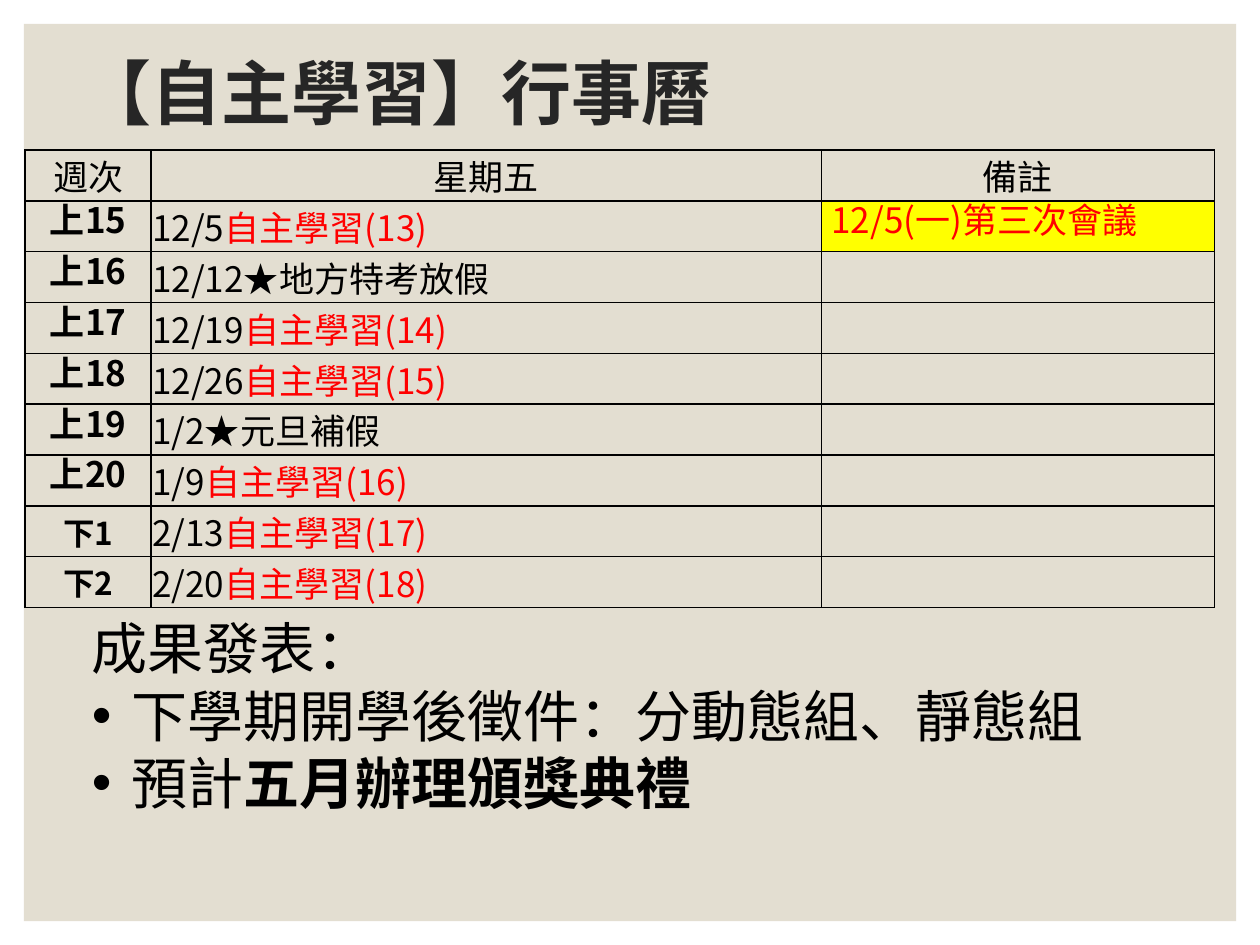
from lxml.etree import SubElement
from pptx import Presentation
from pptx.dml.color import RGBColor
from pptx.enum.shapes import MSO_SHAPE
from pptx.enum.text import MSO_ANCHOR as ANCHOR, MSO_AUTO_SIZE, PP_ALIGN as ALIGN
from pptx.oxml.ns import qn
from pptx.util import Inches, Pt

BLACK = RGBColor(0, 0, 0)
RED = RGBColor(0xFF, 0, 0)
YELLOW = RGBColor(0xFF, 0xFF, 0)
DARK = RGBColor(0x26, 0x26, 0x26)
SAND = RGBColor(0xE3, 0xDE, 0xD1)
FONT, TITLE_FONT = "Noto Sans CJK SC", "League Spartan"

TITLE = "【自主學習】行事曆"
HEADER = ["週次", "星期五", "備註"]
WEEKS = [
    ("上15", "12/5", "自主學習(13)", "12/5(一)第三次會議"),
    ("上16", "12/12★地方特考放假", "", ""),
    ("上17", "12/19", "自主學習(14)", ""),
    ("上18", "12/26", "自主學習(15)", ""),
    ("上19", "1/2★元旦補假", "", ""),
    ("上20", "1/9", "自主學習(16)", ""),
    ("下1", "2/13", "自主學習(17)", ""),
    ("下2", "2/20", "自主學習(18)", ""),
]
COLUMNS = [1, 5.32, 3.12]
RESULTS = [
    [("成果發表：", False)],
    [("下學期開學後徵件：分動態組、靜態組", False)],
    [("預計", False), ("五月辦理頒獎典禮", True)],
]


def box(left, top, width, height):
    return [Inches(v) for v in (left, top, width, height)]


def place(sp, area):
    sp.left, sp.top, sp.width, sp.height = area


def style(font, size, color=BLACK, bold=False, name=FONT):
    font.name, font.size, font.bold = name, Pt(size), bold
    font.color.rgb = color


def add_run(p, text, size, color=BLACK, bold=False, name=FONT):
    r = p.add_run()
    r.text = text
    style(r.font, size, color, bold, name)
    SubElement(r.font._element, qn("a:ea"), typeface=FONT)


def add_panel(slide, prs):
    margin = Inches(0.19)
    sp = slide.shapes.add_shape(MSO_SHAPE.RECTANGLE, margin, margin,
                                prs.slide_width - 2 * margin,
                                prs.slide_height - 2 * margin)
    sp.shadow.inherit = False
    sp.fill.solid()
    sp.fill.fore_color.rgb = SAND
    sp.line.fill.background()
    slide.shapes._spTree.insert(2, sp._element)


def add_title(slide, area):
    sp = slide.shapes.title
    place(sp, area)
    tf = sp.text_frame
    tf.vertical_anchor = ANCHOR.MIDDLE
    p = tf.paragraphs[0]
    p.alignment, p.line_spacing = ALIGN.LEFT, 0.9
    add_run(p, TITLE, 40, DARK, True, TITLE_FONT)


def format_cell(cell, fill=None):
    tc_pr = cell._tc.get_or_add_tcPr()
    for side in ("lnL", "lnR", "lnT", "lnB"):
        ln = SubElement(tc_pr, qn("a:" + side), w=str(Pt(1)))
        SubElement(SubElement(ln, qn("a:solidFill")), qn("a:srgbClr"), val=str(BLACK))
    if fill is None:
        cell.fill.background()
    else:
        cell.fill.solid()
        cell.fill.fore_color.rgb = fill
    cell.margin_left = cell.margin_right = Inches(0.01)
    cell.margin_top = cell.margin_bottom = 0
    cell.vertical_anchor = ANCHOR.MIDDLE
    p = cell.text_frame.paragraphs[0]
    style(p.font, 20)
    return p


def add_calendar(slide, area):
    left, top, width, height = area
    rows = len(WEEKS) + 1
    table = slide.shapes.add_table(rows, len(COLUMNS), left, top, width, height).table
    table.first_row = table.horz_banding = False
    for column, share in zip(table.columns, COLUMNS):
        column.width = int(width * share / sum(COLUMNS))
    for row in table.rows:
        row.height = height // rows
    for c, text in enumerate(HEADER):
        p = format_cell(table.cell(0, c))
        p.alignment = ALIGN.CENTER
        add_run(p, text, 20)
    for i, (week, date, lesson, note) in enumerate(WEEKS, 1):
        p = format_cell(table.cell(i, 0))
        p.alignment = ALIGN.CENTER
        first_term = week.startswith("上")
        if first_term:
            p.line_spacing = Pt(20)
        add_run(p, week, 20 if first_term else 18, bold=True)

        p = format_cell(table.cell(i, 1))
        table.cell(i, 1).vertical_anchor = ANCHOR.TOP
        add_run(p, date, 20)
        if lesson:
            add_run(p, lesson, 20, RED)

        cell = table.cell(i, 2)
        p = format_cell(cell, YELLOW if note else None)
        if note:
            cell.margin_left = Inches(0.08)
            p.line_spacing = Pt(20)
            add_run(p, note, 20, RED)


def add_results(slide, area):
    sp = slide.placeholders[1]
    place(sp, area)
    tf = sp.text_frame
    tf.word_wrap = True
    tf.auto_size = MSO_AUTO_SIZE.NONE
    for i, parts in enumerate(RESULTS):
        p = tf.paragraphs[0] if i == 0 else tf.add_paragraph()
        p_pr = p._p.get_or_add_pPr()
        indent = Inches(0.31) if i else 0
        p_pr.set("marL", str(indent))
        p_pr.set("indent", str(-indent))
        if i:
            SubElement(p_pr, qn("a:buFont"), typeface="Arial")
            SubElement(p_pr, qn("a:buChar"), char="•")
        else:
            SubElement(p_pr, qn("a:buNone"))
        p.space_before = Pt(0)
        p.line_spacing = Pt(38.5)
        for text, bold in parts:
            add_run(p, text, 32, bold=bold)


def main():
    prs = Presentation()
    prs.slide_width, prs.slide_height = Inches(10), Inches(7.5)
    slide = prs.slides.add_slide(prs.slide_layouts[1])
    add_panel(slide, prs)
    add_title(slide, box(0.55, 0, 7.72, 1.53))
    add_calendar(slide, box(0.2, 1.19, 9.44, 3.54))
    add_results(slide, box(0.63, 4.82, 8.15, 1.72))
    prs.save("out.pptx")


if __name__ == "__main__":
    main()
